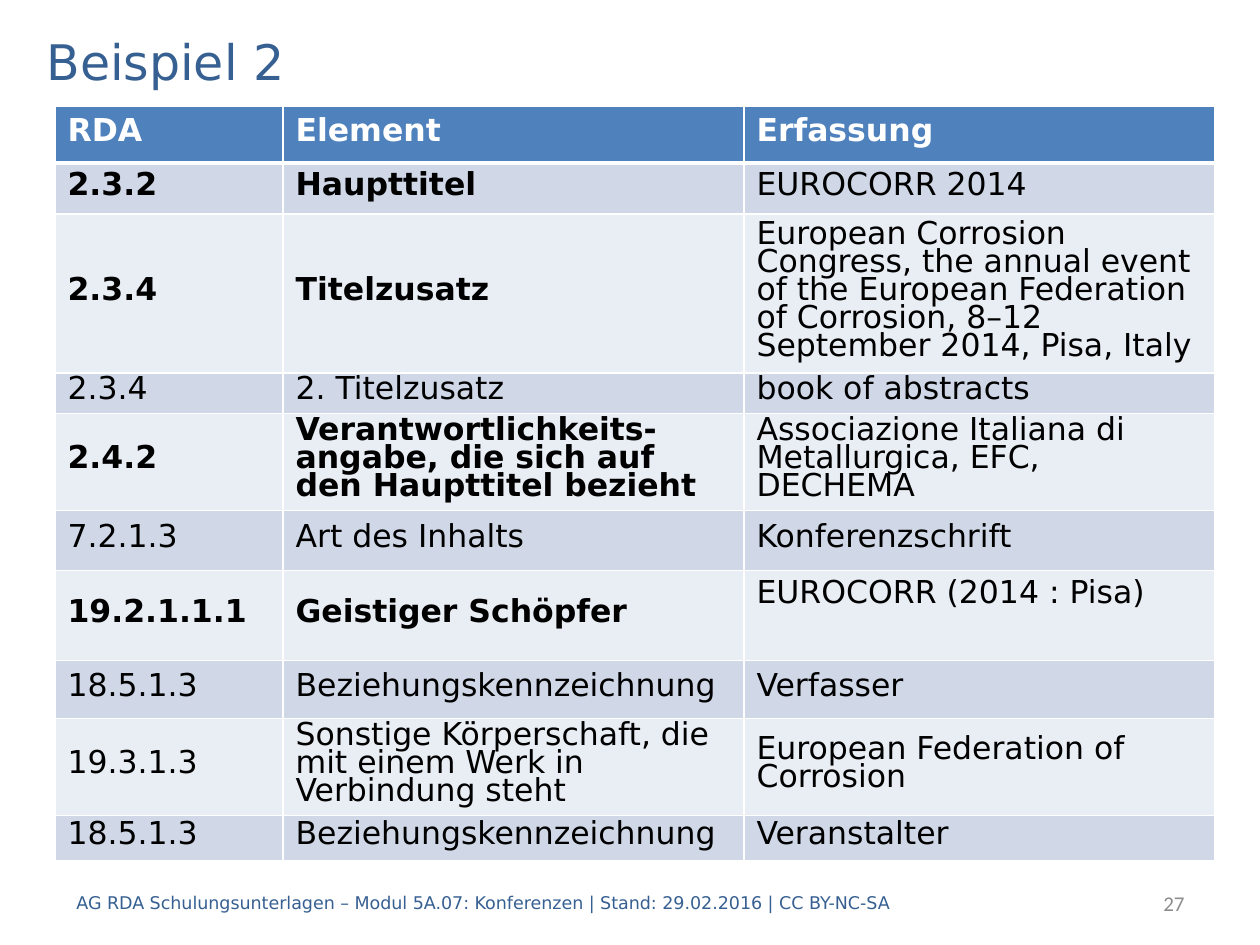
"""Build the slide "Beispiel 2": a table of RDA elements with title and footer."""
from lxml.etree import SubElement
from pptx import Presentation
from pptx.dml.color import RGBColor
from pptx.enum.text import MSO_ANCHOR, PP_ALIGN
from pptx.oxml.ns import qn
from pptx.util import Pt

PX = 914400 // 126
FONT = "DejaVu Sans"
COLORS = {"title": "376092", "number": "8C8C8C", "header": "4F81BD", "odd": "D0D8E8",
          "even": "E9EDF4", "white": "FFFFFF", "black": "000000"}

TITLE = "Beispiel 2"
FOOTER = "AG RDA Schulungsunterlagen – Modul 5A.07: Konferenzen | Stand: 29.02.2016 | CC BY-NC-SA"
NUMBER = "27"
HEADER = ("RDA", "Element", "Erfassung")
HEADER_HEIGHT = 57
COL_WIDTHS = (228, 461, 471)
ROWS = [
    (51, True, ("2.3.2", "Haupttitel", "EUROCORR 2014")),
    (159, True, ("2.3.4", "Titelzusatz",
                 "European Corrosion Congress, the annual event of the European Federation "
                 "of Corrosion, 8–12 September 2014, Pisa, Italy")),
    (40, False, ("2.3.4", "2. Titelzusatz", "book of abstracts")),
    (97, True, ("2.4.2", "Verantwortlichkeits-angabe, die sich auf den Haupttitel bezieht",
                "Associazione Italiana di Metallurgica, EFC, DECHEMA")),
    (60, False, ("7.2.1.3", "Art des Inhalts", "Konferenzschrift")),
    (90, True, ("19.2.1.1.1", "Geistiger Schöpfer", "EUROCORR (2014 : Pisa)")),
    (58, False, ("18.5.1.3", "Beziehungskennzeichnung", "Verfasser")),
    (97, False, ("19.3.1.3", "Sonstige Körperschaft, die mit einem Werk in Verbindung steht",
                 "European Federation of Corrosion")),
    (45, False, ("18.5.1.3", "Beziehungskennzeichnung", "Veranstalter")),
]
TOP_ROW = 3
RAISED_CELL = (6, 2)
RAISED_MARGIN = 44


def rgb(name):
    return RGBColor.from_string(COLORS[name])


def place(s, left, top, width, height):
    s.left, s.top, s.width, s.height = (v * PX for v in (left, top, width, height))


def write(tf, text, size, color, font=FONT, bold=False, align=PP_ALIGN.LEFT):
    tf.text = text
    tf.word_wrap = True
    p = tf.paragraphs[0]
    p.alignment = align
    p.font.size, p.font.name, p.font.bold = Pt(size), font, bold
    p.font.color.rgb = rgb(color)
    return p


def add_label(slide, box, *args, **kwargs):
    sp = slide.shapes.add_textbox(0, 0, 0, 0)
    place(sp, *box)
    sp.text_frame.vertical_anchor = MSO_ANCHOR.MIDDLE
    write(sp.text_frame, *args, **kwargs)


def set_borders(cell, top, bottom):
    tc_pr = cell._tc.get_or_add_tcPr()
    for side, width in (("L", 1), ("R", 1), ("T", top), ("B", bottom)):
        ln = SubElement(tc_pr, qn(f"a:ln{side}"), w=str(Pt(width)))
        fill = SubElement(ln, qn("a:solidFill"))
        SubElement(fill, qn("a:srgbClr"), val=COLORS["white"])


def fill_cell(cell, color, top=1, bottom=1):
    set_borders(cell, top, bottom)
    cell.fill.solid()
    cell.fill.fore_color.rgb = rgb(color)


def add_table(slide):
    heights = [HEADER_HEIGHT] + [height for height, _, _ in ROWS]
    box = (55, 106, sum(COL_WIDTHS), sum(heights))
    table = slide.shapes.add_table(len(heights), len(COL_WIDTHS), *(v * PX for v in box)).table
    for column, width in zip(table.columns, COL_WIDTHS):
        column.width = width * PX
    for row, height in zip(table.rows, heights):
        row.height = height * PX

    for c, text in enumerate(HEADER):
        cell = table.cell(0, c)
        fill_cell(cell, "header", bottom=3)
        write(cell.text_frame, text, 18, "white", bold=True)

    for r, (_, key, texts) in enumerate(ROWS, 1):
        for c, text in enumerate(texts):
            cell = table.cell(r, c)
            fill_cell(cell, "odd" if r % 2 else "even", top=3 if r == 1 else 1)
            cell.vertical_anchor = MSO_ANCHOR.TOP if r == TOP_ROW else MSO_ANCHOR.MIDDLE
            p = write(cell.text_frame, text, 18, "black", bold=key and c < 2)
            p.line_spacing = Pt(16)
            p.space_before = p.space_after = Pt(6)
    table.cell(*RAISED_CELL).margin_bottom = RAISED_MARGIN * PX


def main():
    prs = Presentation()
    prs.slide_width, prs.slide_height = 1260 * PX, 945 * PX
    slide = prs.slides.add_slide(prs.slide_layouts[5])
    title = slide.shapes.title
    place(title, 34, 25, 1191, 71)
    title.text_frame.vertical_anchor = MSO_ANCHOR.MIDDLE
    write(title.text_frame, TITLE, 28, "title")
    add_table(slide)
    add_label(slide, (64, 878, 1052, 50), FOOTER, 10, "title")
    add_label(slide, (997, 878, 200, 50), NUMBER, 12, "number", "Calibri", align=PP_ALIGN.RIGHT)
    prs.save("out.pptx")


if __name__ == "__main__":
    main()
